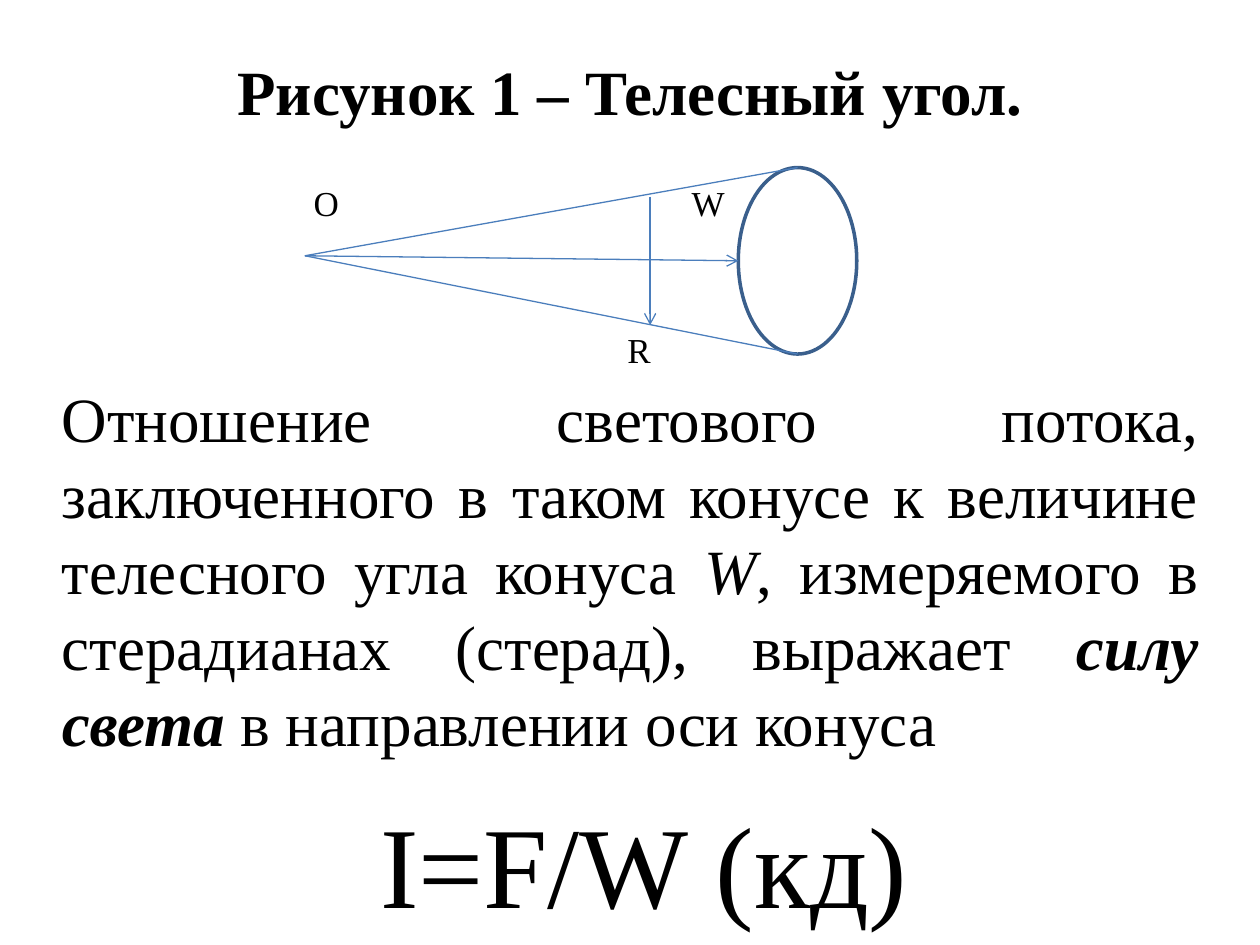
from pptx import Presentation
from pptx import util as u
from pptx.dml.color import RGBColor
from pptx.enum import shapes, text
from pptx.oxml.ns import qn
from lxml import etree

Inches = u.Inches
FONT = "Times New Roman"
COLORS = {"text": "000000", "paper": "FFFFFF", "outline": "3A5F8C", "ray": "4B7EBC"}
ALIGN = text.PP_ALIGN


def color(name):
    return RGBColor.from_string(COLORS[name])


def add_text(slide, box, runs, size, align=ALIGN.LEFT, spacing=None):
    shape = slide.shapes.add_textbox(*map(Inches, box))
    frame = shape.text_frame
    frame.word_wrap = True
    frame.margin_left = frame.margin_right = frame.margin_top = frame.margin_bottom = 0
    paragraph = frame.paragraphs[0]
    paragraph.alignment = align
    paragraph.line_spacing = spacing
    for wording, bold, italic in runs:
        run = paragraph.add_run()
        run.text = wording
        run.font.name = FONT
        run.font.size = u.Pt(size)
        run.font.bold = bold
        run.font.italic = italic
        run.font.color.rgb = color("text")


def add_ray(slide, start, end, arrow=False):
    points = map(Inches, (*start, *end))
    ray = slide.shapes.add_connector(shapes.MSO_CONNECTOR.STRAIGHT, *points)
    ray.line.color.rgb = color("ray")
    ray.line.width = u.Pt(0.75)
    if arrow:
        etree.SubElement(ray.line._get_or_add_ln(), qn("a:tailEnd"), type="arrow")
    etree.SubElement(ray._element.spPr, qn("a:effectLst"))


def add_cone(slide, box):
    left, top, width, height = box
    base_width = 0.94
    base_left = left + width - base_width
    base_middle = base_left + base_width / 2
    apex = (left, top + 0.7)

    base = slide.shapes.add_shape(
        shapes.MSO_SHAPE.OVAL, *map(Inches, (base_left, top, base_width, height))
    )
    base.shadow.inherit = False
    base.fill.solid()
    base.fill.fore_color.rgb = color("paper")
    base.line.color.rgb = color("outline")
    base.line.width = u.Pt(2)

    add_ray(slide, (base_middle, top), apex)
    add_ray(slide, apex, (base_middle, top + height))
    add_ray(slide, apex, (base_left, top + height / 2), arrow=True)
    radius_x = left + 2.74
    add_ray(slide, (radius_x, top + 0.23), (radius_x, top + 1.25), arrow=True)

    for label, x, y in (("O", 0.07, 0.11), ("W", 3.07, 0.11), ("R", 2.56, 1.28)):
        add_text(slide, (left + x, top + y, 0.4, 0.32), [(label, False, False)], 20)


def add_title(slide, box):
    add_text(slide, box, [("Рисунок 1 – Телесный угол.", True, False)], 36, ALIGN.CENTER)


def add_definition(slide, box):
    runs = [
        ("Отношение светового потока, заключенного в таком конусе к величине "
         "телесного угла конуса ", False, False),
        ("W", False, True),
        (", измеряемого в стерадианах (стерад), выражает ", False, False),
        ("силу света ", True, True),
        ("в направлении оси конуса", False, False),
    ]
    add_text(slide, box, runs, 36, ALIGN.JUSTIFY, u.Pt(43.4))


def add_formula(slide, box):
    add_text(slide, box, [("I=F/W (кд)", False, False)], 66, ALIGN.CENTER)


def main():
    presentation = Presentation()
    presentation.slide_width = Inches(10)
    presentation.slide_height = Inches(7.5)
    slide = presentation.slides.add_slide(presentation.slide_layouts[6])
    add_title(slide, (0.49, 0.42, 9.02, 0.6))
    add_definition(slide, (0.49, 3.01, 9.02, 3.05))
    add_formula(slide, (0.6, 6.29, 9.02, 1.05))
    add_cone(slide, (2.42, 1.33, 4.38, 1.48))
    presentation.save("out.pptx")


if __name__ == "__main__":
    main()
